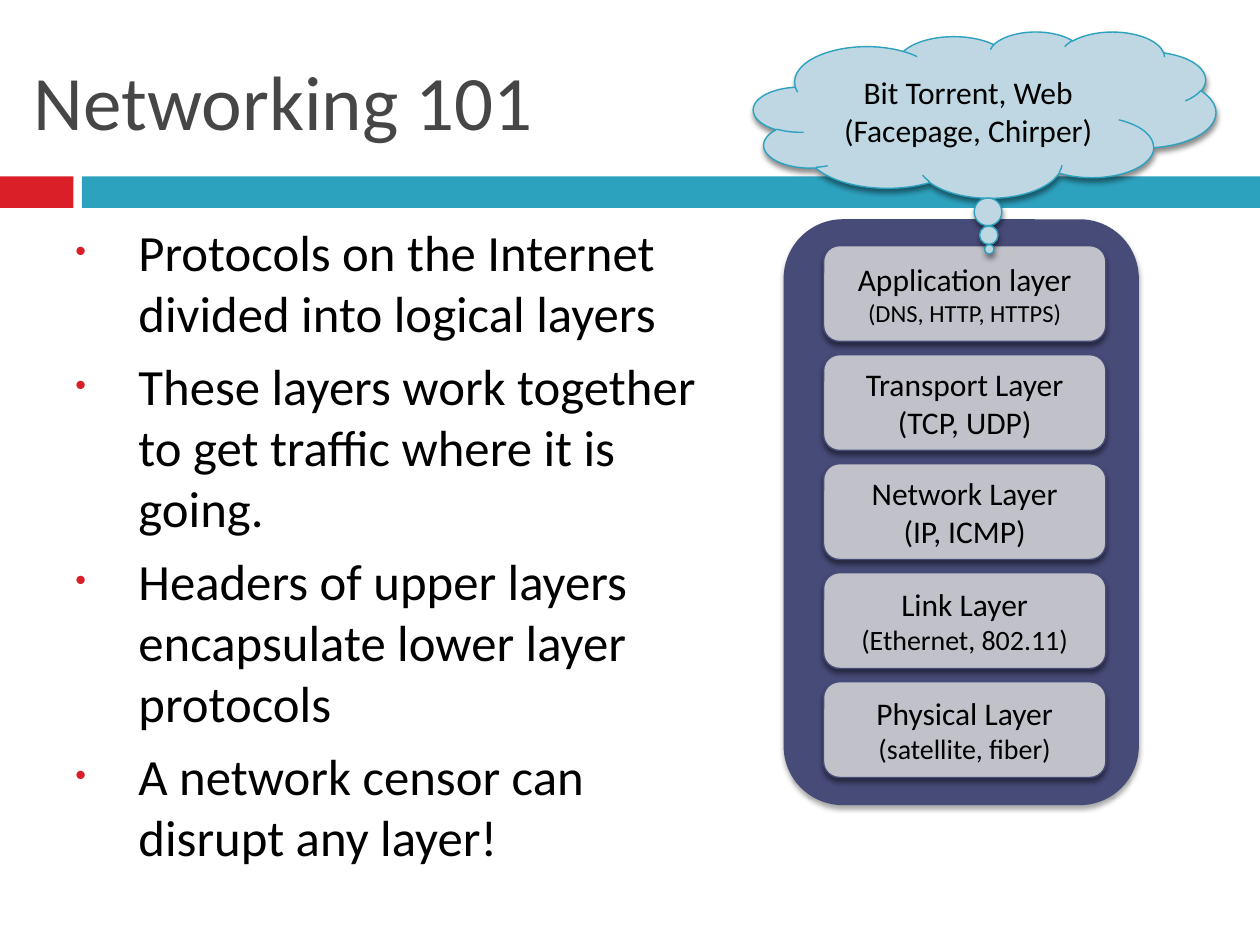
from dataclasses import dataclass

from lxml import etree
from pptx import Presentation
from pptx import util as u
from pptx.dml.color import RGBColor
from pptx.enum import shapes, text
from pptx.oxml.ns import qn


@dataclass(frozen=True)
class Theme:
    font: str = "Calibri"
    title_color: str = "464646"
    ink: str = "000000"
    red: str = "DA1F28"
    teal: str = "2DA2BF"
    navy: str = "474B78"
    layer_fill: str = "C1C1CA"
    cloud_fill: str = "BED7E2"
    title_size: float = 44
    body_size: float = 29
    label_size: float = 18
    line_width: float = 0.79


@dataclass(frozen=True)
class Box:
    left: float
    top: float
    width: float
    height: float

    def lengths(self):
        return [u.Pt(n) for n in (self.left, self.top, self.width, self.height)]

    def inside(self, left, top, width, height):
        return Box(self.left + left, self.top + top, width, height)


THEME = Theme()

BULLETS = [
    "Protocols on the Internet divided into logical layers",
    "These layers work together to get traffic where it is going.",
    "Headers of upper layers encapsulate lower layer protocols",
    "A network censor can disrupt any layer!",
]

LAYERS = [
    ("Application layer", "(DNS, HTTP, HTTPS)", 14),
    ("Transport Layer", "(TCP, UDP)", 18),
    ("Network Layer", "(IP, ICMP)", 18),
    ("Link Layer", "(Ethernet, 802.11)", 16),
    ("Physical Layer", "(satellite, fiber)", 16),
]


def format_paragraph(paragraph, size, color, alignment):
    paragraph.alignment = alignment
    for run in paragraph.runs:
        run.font.name = THEME.font
        run.font.size = u.Pt(size)
        run.font.color.rgb = RGBColor.from_string(color)


def add_shadow(shape, opacity, distance):
    effects = shape._element.spPr.find(qn("a:effectLst"))
    shadow = etree.SubElement(
        effects, qn("a:outerShdw"), blurRad=str(u.Pt(3)),
        dist=str(u.Pt(distance)), dir="5400000", rotWithShape="0")
    color = etree.SubElement(shadow, qn("a:srgbClr"), val="000000")
    etree.SubElement(color, qn("a:alpha"), val=str(opacity * 1000))


def add_filled_shape(parent, kind, box, fill, line=None):
    shape = parent.add_shape(kind, *box.lengths())
    shape.shadow.inherit = False
    shape.fill.solid()
    shape.fill.fore_color.rgb = RGBColor.from_string(fill)
    if line:
        shape.line.color.rgb = RGBColor.from_string(line)
        shape.line.width = u.Pt(THEME.line_width)
    else:
        shape.line.fill.background()
    return shape


def add_label(shape, content, sizes):
    frame = shape.text_frame
    frame.text = content
    frame.word_wrap = True
    frame.vertical_anchor = text.MSO_ANCHOR.MIDDLE
    for paragraph, size in zip(frame.paragraphs, sizes):
        format_paragraph(paragraph, size, THEME.ink, text.PP_ALIGN.CENTER)


def place_title(slide, box):
    title = slide.shapes.title
    title.left, title.top, title.width, title.height = box.lengths()
    title.text_frame.text = "Networking 101"
    title.text_frame.vertical_anchor = text.MSO_ANCHOR.MIDDLE
    format_paragraph(title.text_frame.paragraphs[0], THEME.title_size,
                     THEME.title_color, text.PP_ALIGN.LEFT)


def place_band(slide, box):
    accent_width, band_left = 42, 46.8
    accent = box.inside(0, 0, accent_width, box.height)
    band = box.inside(band_left, 0, box.width - band_left, box.height)
    for part, color in ((accent, THEME.red), (band, THEME.teal)):
        add_filled_shape(slide.shapes, shapes.MSO_SHAPE.RECTANGLE, part, color)


def add_bullet(paragraph):
    properties = paragraph._p.get_or_add_pPr()
    properties.set("marL", str(u.Pt(36)))
    properties.set("indent", str(-u.Pt(36)))
    color = etree.SubElement(properties, qn("a:buClr"))
    etree.SubElement(color, qn("a:srgbClr"), val=THEME.red)
    etree.SubElement(properties, qn("a:buSzPct"), val="60000")
    etree.SubElement(properties, qn("a:buFont"), typeface="Arial")
    etree.SubElement(properties, qn("a:buChar"), char="•")


def place_bullets(slide, box):
    frame = slide.shapes.add_textbox(*box.lengths()).text_frame
    frame.word_wrap = True
    frame.text = "\n".join(BULLETS)
    for paragraph in frame.paragraphs:
        format_paragraph(paragraph, THEME.body_size, THEME.ink, text.PP_ALIGN.LEFT)
        paragraph.space_before = u.Pt(7)
        add_bullet(paragraph)


def place_layer_stack(slide, box):
    stack = slide.shapes.add_group_shape().shapes
    kind = shapes.MSO_SHAPE.ROUNDED_RECTANGLE
    panel = add_filled_shape(stack, kind, box, THEME.navy)
    add_shadow(panel, 35, 2)
    layer_width, layer_height, first_top, pitch = 161.3, 54.7, 15.1, 62.3
    left = (box.width - layer_width) / 2 + 2
    for index, (name, protocols, size) in enumerate(LAYERS):
        layer_box = box.inside(left, first_top + index * pitch,
                               layer_width, layer_height)
        layer = add_filled_shape(stack, kind, layer_box, THEME.layer_fill, THEME.navy)
        add_shadow(layer, 45, 2.4)
        add_label(layer, f"{name}\n{protocols}", (THEME.label_size, size))


def place_cloud(slide, box):
    cloud = add_filled_shape(slide.shapes, shapes.MSO_SHAPE.CLOUD_CALLOUT, box,
                             THEME.cloud_fill, THEME.teal)
    cloud.adjustments[0] = 0.01
    cloud.adjustments[1] = 0.81
    add_shadow(cloud, 45, 2.4)
    add_label(cloud, "Bit Torrent, Web (Facepage, Chirper)", (THEME.label_size,))


def main():
    presentation = Presentation()
    presentation.slide_width = u.Pt(720)
    presentation.slide_height = u.Pt(540)
    slide = presentation.slides.add_slide(
        presentation.slide_layouts.get_by_name("Title Only"))
    place_band(slide, Box(0, 100.8, 720, 18))
    place_title(slide, Box(12.2, 18, 696.2, 77.8))
    place_bullets(slide, Box(36, 122.4, 373.7, 372.2))
    place_layer_stack(slide, Box(447.8, 125.3, 203, 334.8))
    place_cloud(slide, Box(430.6, 18, 264.2, 95))
    presentation.save("out.pptx")


if __name__ == "__main__":
    main()
